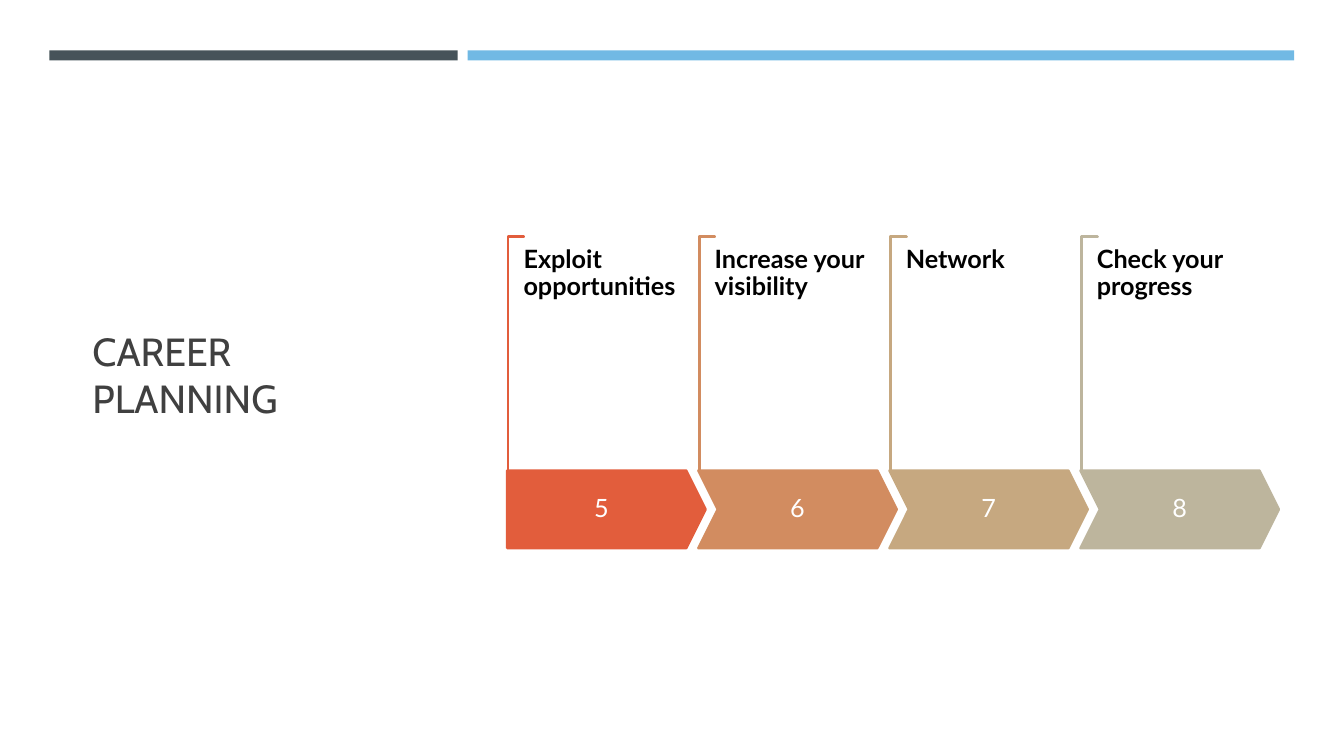
"""Build the career planning slide with its four numbered steps."""
import pptx
import pptx.util
import pptx.dml.color
import pptx.enum.shapes
import pptx.enum.text

Pt = pptx.util.Pt
SHAPE = pptx.enum.shapes.MSO_SHAPE
ANCHOR = pptx.enum.text.MSO_ANCHOR
ALIGN = pptx.enum.text.PP_ALIGN

TITLE = "CAREER PLANNING"
STEPS = [
    ("5", "Exploit opportunities", "E25D3C"),
    ("6", "Increase your visibility", "D28C60"),
    ("7", "Network", "C6A880"),
    ("8", "Check your progress", "BDB59D"),
]
THEME = {
    "title_font": "Cabin", "body_font": "Lato",
    "title_size": 28, "body_size": 18,
    "title": "404040", "label": "000000", "white": "FFFFFF",
    "dark_bar": "465359", "light_bar": "71B9E4", "line": 1.75,
}
BARS = [(35.3, 291.6, THEME["dark_bar"]), (334.1, 590.4, THEME["light_bar"])]
BAR_TOP, BAR_HEIGHT = 36, 7.2
STEP_LEFT, STEP_PITCH = 362.3, 136.5
ARROW_TOP, ARROW_WIDTH, ARROW_HEIGHT = 336.1, 141.7, 55.5
BRACKET_OFFSET, BRACKET_WIDTH, BRACKET_HEIGHT = 0.6, 11.5, 167
LABEL_OFFSET, LABEL_TOP, LABEL_WIDTH, LABEL_HEIGHT = 11.7, 176.4, 115.2, 133.2


def rgb(value):
    return pptx.dml.color.RGBColor.from_string(value)


def add_text(sp, text, *, size, color, font, bold=False, align=ALIGN.LEFT,
             anchor=ANCHOR.TOP, margins=(0, 0), spacing=0.9):
    tf = sp.text_frame
    tf.word_wrap = True
    tf.vertical_anchor = anchor
    tf.margin_left = tf.margin_right = Pt(margins[0])
    tf.margin_top = tf.margin_bottom = Pt(margins[1])
    p = tf.paragraphs[0]
    p.alignment = align
    p.line_spacing = spacing
    r = p.add_run()
    r.text = text
    r.font.size = Pt(size)
    r.font.name = font
    r.font.bold = bold
    r.font.color.rgb = rgb(color)


def add_shape(slide, kind, box, fill, line=None, adjustments=()):
    sp = slide.shapes.add_shape(kind, *map(Pt, box))
    sp.shadow.inherit = False
    sp.fill.solid()
    sp.fill.fore_color.rgb = rgb(fill)
    if line:
        sp.line.color.rgb = rgb(line)
        sp.line.width = Pt(THEME["line"])
    else:
        sp.line.fill.background()
    for i, value in enumerate(adjustments):
        sp.adjustments[i] = value
    return sp


def add_step(slide, index, number, label, color):
    left = STEP_LEFT + index * STEP_PITCH
    center_x = left + BRACKET_OFFSET + BRACKET_WIDTH / 2
    center_y = ARROW_TOP - BRACKET_HEIGHT / 2
    bracket_box = (center_x - BRACKET_HEIGHT / 2, center_y - BRACKET_WIDTH / 2,
                   BRACKET_HEIGHT, BRACKET_WIDTH)
    bracket = add_shape(slide, SHAPE.CORNER, bracket_box, THEME["white"],
                        color, (0.01, 0.01))
    bracket.rotation = 90

    kind = SHAPE.CHEVRON if index else SHAPE.PENTAGON
    arrow = add_shape(slide, kind, (left, ARROW_TOP, ARROW_WIDTH, ARROW_HEIGHT),
                      color, color, (0.25,))
    add_text(arrow, number, size=THEME["body_size"], color=THEME["white"],
             font=THEME["body_font"], align=ALIGN.CENTER,
             anchor=ANCHOR.MIDDLE, margins=(8.6, 18))

    box = (left + LABEL_OFFSET, LABEL_TOP, LABEL_WIDTH, LABEL_HEIGHT)
    sp = slide.shapes.add_textbox(*map(Pt, box))
    add_text(sp, label, size=THEME["body_size"], color=THEME["label"],
             font=THEME["body_font"], bold=True)


def main():
    prs = pptx.Presentation()
    prs.slide_width, prs.slide_height = Pt(960), Pt(540)
    slide = prs.slides.add_slide(prs.slide_layouts[6])
    slide.background.fill.solid()
    slide.background.fill.fore_color.rgb = rgb(THEME["white"])

    title = slide.shapes.add_textbox(Pt(59), Pt(82), Pt(240.5), Pt(371))
    add_text(title, TITLE, size=THEME["title_size"], color=THEME["title"],
             font=THEME["title_font"], anchor=ANCHOR.MIDDLE,
             margins=(7.2, 3.6), spacing=1.0)
    for left, width, color in BARS:
        add_shape(slide, SHAPE.RECTANGLE, (left, BAR_TOP, width, BAR_HEIGHT), color)
    for index, step in enumerate(STEPS):
        add_step(slide, index, *step)
    prs.save("out.pptx")


if __name__ == "__main__":
    main()
